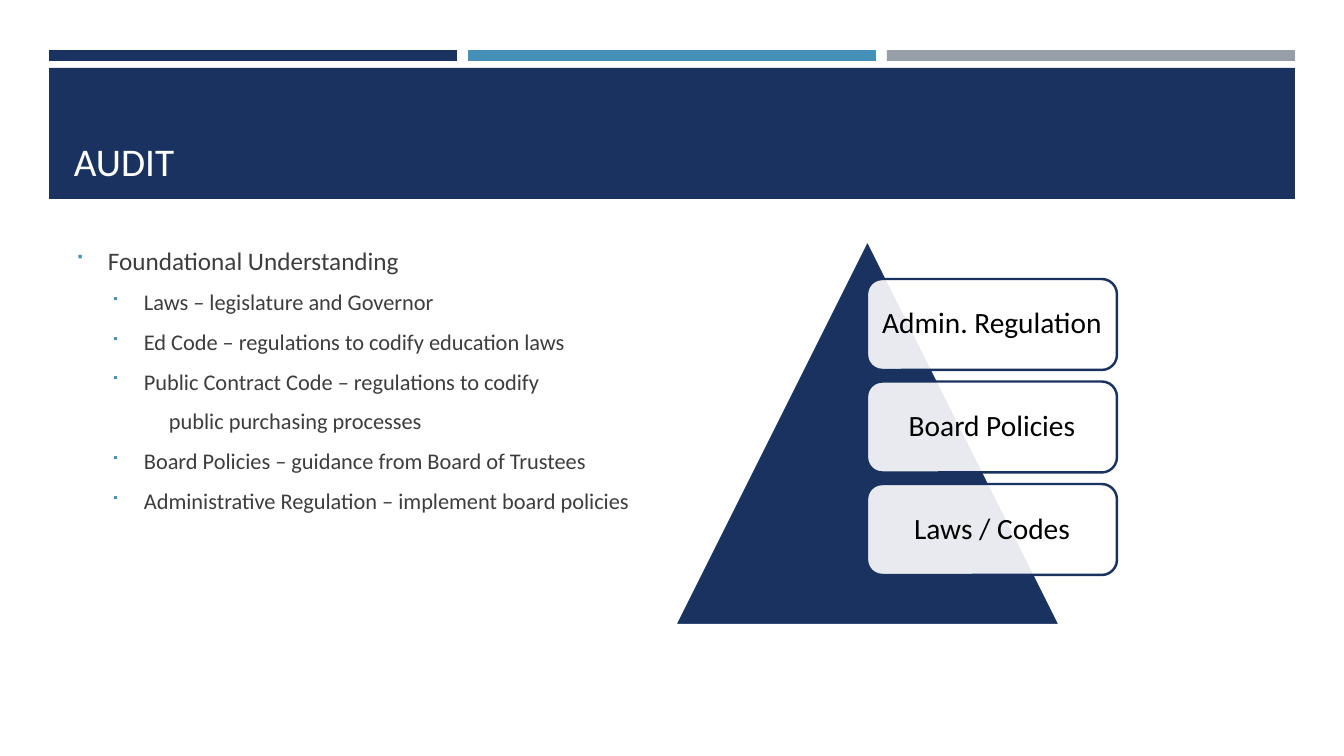
from lxml import etree
from pptx import Presentation
from pptx.dml.color import RGBColor
from pptx.enum.shapes import MSO_SHAPE
from pptx.enum.text import MSO_ANCHOR, PP_ALIGN
from pptx.oxml.ns import qn
from pptx.util import Pt

RECT, TRIANGLE, ROUNDED = MSO_SHAPE.RECTANGLE, MSO_SHAPE.ISOSCELES_TRIANGLE, MSO_SHAPE.ROUNDED_RECTANGLE
TOP, MIDDLE, BOTTOM = MSO_ANCHOR.TOP, MSO_ANCHOR.MIDDLE, MSO_ANCHOR.BOTTOM
CENTER = PP_ALIGN.CENTER

TITLE = "AUDIT"
# (style, text)
OUTLINE = [
    ("topic", "Foundational Understanding"),
    ("point", "Laws – legislature and Governor"),
    ("point", "Ed Code – regulations to codify education laws"),
    ("point", "Public Contract Code – regulations to codify"),
    ("continued", "public purchasing processes"),
    ("point", "Board Policies – guidance from Board of Trustees"),
    ("point", "Administrative Regulation – implement board policies"),
]
PYRAMID_LEVELS = ["Admin. Regulation", "Board Policies", "Laws / Codes"]

THEME = {
    "font": "Calibri", "bullet_font": "Wingdings",
    "navy": "1A3260", "blue": "4590B8", "grey": "969FA7",
    "white": "FFFFFF", "text": "3D3D3D", "black": "000000",
    "title": 28, "topic": 18, "point": 16, "continued": 16, "level": 21,
    "outline": 1.75,
}
BAR_COLORS = ["navy", "blue", "grey"]
# style: (text indent px, bullet hang px)
INDENTS = {"topic": (33, 33), "point": (69, 33), "continued": (94, 0)}

PX = 914400 / 100.8
SLIDE = (1344, 756)
BAR_LEFT, BAR_TOP, BAR_HEIGHT, BAR_GAP = 49, 50, 11, 11
BANNER = (49, 68, 1246, 131)
TITLE_BOX = (64, 77, 1216, 112)
OUTLINE_BOX = (65, 240, 606, 405)
PYRAMID = (675, 240, 385, 385)
CARD_LEFT, CARD_WIDTH, CARD_HEIGHT = 867, 250, 91
CARDS_TOP, CARDS_BOTTOM = 279, 575
CARD_INSET = 7


def px(value):
    return round(value * PX)


def color(name):
    return RGBColor.from_string(THEME[name])


def assign(target, values):
    for name, value in values.items():
        setattr(target, name, value)


def add_block(slide, preset, box, fill, line=None, opacity=None):
    block = slide.shapes.add_shape(preset, *map(px, box))
    block.shadow.inherit = False
    block.fill.solid()
    block.fill.fore_color.rgb = color(fill)
    if opacity is not None:
        fill_color = block.fill._xPr.find(f"{qn('a:solidFill')}/{qn('a:srgbClr')}")
        etree.SubElement(fill_color, qn("a:alpha"), val=str(opacity * 1000))
    if line:
        block.line.color.rgb = color(line)
        block.line.width = Pt(THEME["outline"])
    else:
        block.line.fill.background()
    return block


def add_text_frame(slide, box, anchor):
    frame = slide.shapes.add_textbox(*map(px, box)).text_frame
    assign(frame, {"word_wrap": True, "vertical_anchor": anchor})
    return frame


def write(paragraph, text, size, ink, **layout):
    run = paragraph.add_run()
    run.text = text
    assign(run.font, {"name": THEME["font"], "size": Pt(THEME[size])})
    run.font.color.rgb = color(ink)
    assign(paragraph, layout)


def set_bullet(paragraph, indent, hang):
    properties = paragraph._p.get_or_add_pPr()
    properties.set("marL", str(px(indent)))
    properties.set("indent", str(-px(hang)))
    if hang:
        bullet_color = etree.SubElement(properties, qn("a:buClr"))
        etree.SubElement(bullet_color, qn("a:srgbClr"), val=THEME["blue"])
        etree.SubElement(properties, qn("a:buSzPct"), val="92000")
        etree.SubElement(properties, qn("a:buFont"), typeface=THEME["bullet_font"])
        etree.SubElement(properties, qn("a:buChar"), char="■")


def add_header(slide):
    gaps = BAR_GAP * (len(BAR_COLORS) - 1)
    bar_width = (BANNER[2] - gaps) / len(BAR_COLORS)
    for index, fill in enumerate(BAR_COLORS):
        left = BAR_LEFT + index * (bar_width + BAR_GAP)
        add_block(slide, RECT, (left, BAR_TOP, bar_width, BAR_HEIGHT), fill)
    add_block(slide, RECT, BANNER, "navy")
    title = add_text_frame(slide, TITLE_BOX, BOTTOM)
    write(title.paragraphs[0], TITLE, "title", "white")


def add_outline(slide):
    frame = add_text_frame(slide, OUTLINE_BOX, TOP)
    for index, (style, text) in enumerate(OUTLINE):
        paragraph = frame.add_paragraph() if index else frame.paragraphs[0]
        write(paragraph, text, style, "text",
              space_before=Pt(THEME[style] * 0.2), space_after=Pt(6))
        set_bullet(paragraph, *INDENTS[style])


def add_pyramid(slide):
    add_block(slide, TRIANGLE, PYRAMID, "navy", line="white")
    pitch = (CARDS_BOTTOM - CARDS_TOP - CARD_HEIGHT) / (len(PYRAMID_LEVELS) - 1)
    for index, level in enumerate(PYRAMID_LEVELS):
        box = (CARD_LEFT, CARDS_TOP + index * pitch, CARD_WIDTH, CARD_HEIGHT)
        card = add_block(slide, ROUNDED, box, "white", line="navy", opacity=90)
        inset = px(CARD_INSET)
        assign(card.text_frame, {
            "word_wrap": True, "vertical_anchor": MIDDLE,
            "margin_left": inset, "margin_right": inset,
            "margin_top": inset, "margin_bottom": inset,
        })
        write(card.text_frame.paragraphs[0], level, "level", "black",
              alignment=CENTER, line_spacing=0.9)


def main():
    deck = Presentation()
    deck.slide_width, deck.slide_height = map(px, SLIDE)
    slide = deck.slides.add_slide(deck.slide_layouts[6])
    add_header(slide)
    add_outline(slide)
    add_pyramid(slide)
    deck.save("out.pptx")


if __name__ == "__main__":
    main()
